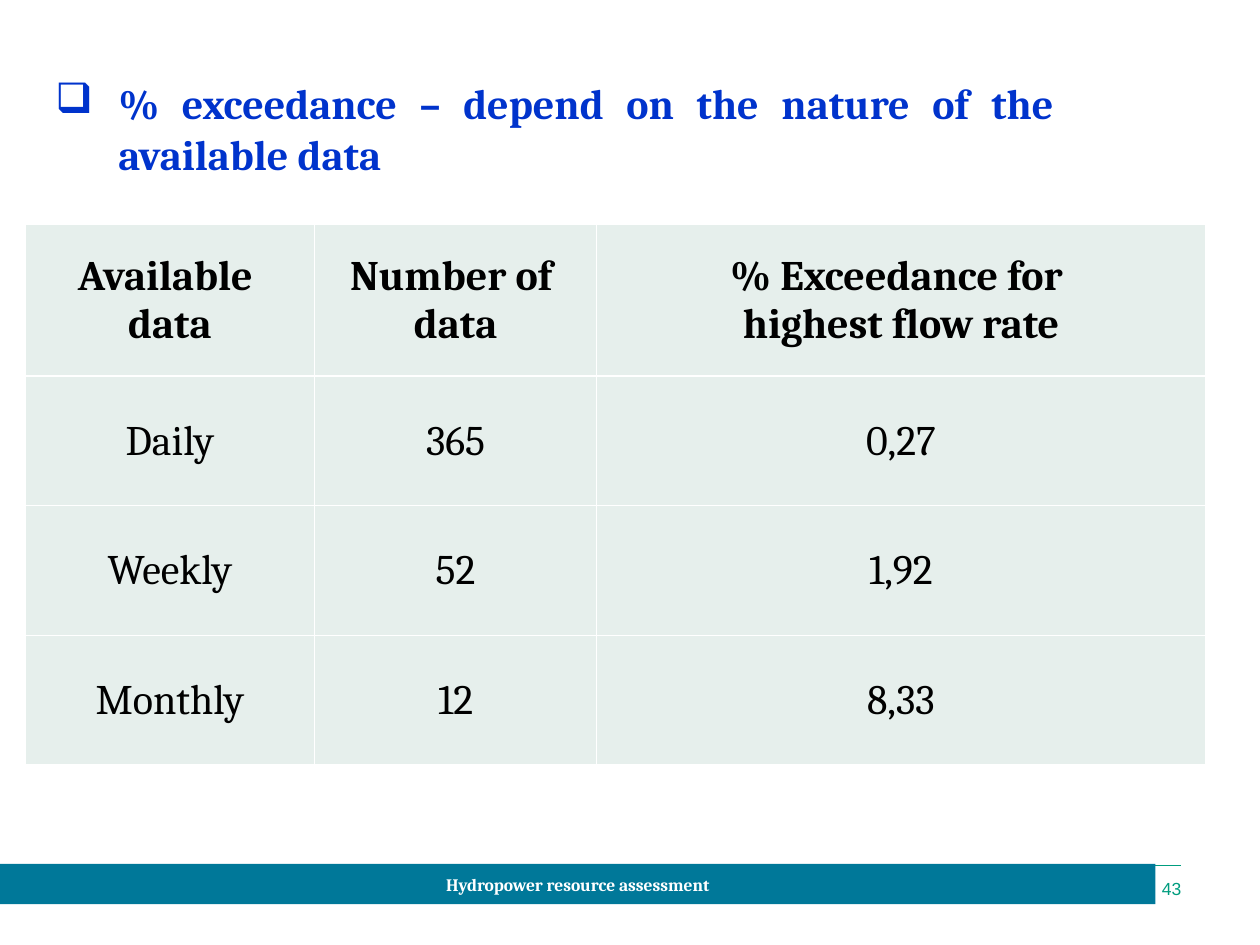
from lxml.etree import SubElement
from pptx import Presentation
from pptx.dml.color import RGBColor
from pptx.enum.shapes import MSO_CONNECTOR, MSO_SHAPE
from pptx.enum.text import MSO_ANCHOR, PP_ALIGN
from pptx.oxml.ns import qn
from pptx.util import Pt

COLORS = {
    "white": "FFFFFF",
    "black": "000000",
    "blue": "0033CC",
    "teal": "007899",
    "green": "009D7F",
    "cell": "E6EFEC",
}
HEADING = {"name": "Cambria", "size": Pt(24), "bold": True}
BODY = {**HEADING, "bold": False}
FOOTER = {"name": "Cambria", "size": Pt(10), "bold": True}
NUMBER = {"name": "Arial", "size": Pt(10), "bold": False}


def rgb(name):
    return RGBColor.from_string(COLORS[name])


def add_solid(parent, color):
    fill = SubElement(parent, qn("a:solidFill"))
    SubElement(fill, qn("a:srgbClr"), val=COLORS[color])


class SlideBuilder:
    def __init__(self, slide):
        self.s = slide

    def fill_text(self, tf, text, font, color, align=PP_ALIGN.CENTER, bullet=None):
        for i, line in enumerate(text.split("\n")):
            p = tf.paragraphs[0] if i == 0 else tf.add_paragraph()
            p.alignment = align
            if bullet:
                self.bullet(p, bullet, color)
            r = p.add_run()
            r.text = line
            for key, value in font.items():
                setattr(r.font, key, value)
            r.font.color.rgb = rgb(color)

    def bullet(self, p, char, color):
        pPr = p._p.get_or_add_pPr()
        pPr.set("marL", str(Pt(36)))
        pPr.set("indent", str(-Pt(36)))
        bu_clr = SubElement(pPr, qn("a:buClr"))
        SubElement(bu_clr, qn("a:srgbClr"), val=COLORS[color])
        SubElement(pPr, qn("a:buChar"), char=char)

    def frame(self, tf, anchor, margins):
        tf.word_wrap = True
        tf.vertical_anchor = anchor
        tf.margin_left = tf.margin_right = Pt(margins[0])
        tf.margin_top = tf.margin_bottom = Pt(margins[1])

    def text(self, box, text, font, color, align, anchor=MSO_ANCHOR.TOP,
             margins=(7.2, 3.6), bullet=None):
        sp = self.s.shapes.add_textbox(*map(Pt, box))
        self.frame(sp.text_frame, anchor, margins)
        self.fill_text(sp.text_frame, text, font, color, align, bullet)

    def bar(self, box, text, font, fill, color):
        sp = self.s.shapes.add_shape(MSO_SHAPE.RECTANGLE, *map(Pt, box))
        sp.shadow.inherit = False
        sp.fill.solid()
        sp.fill.fore_color.rgb = rgb(fill)
        sp.line.fill.background()
        self.frame(sp.text_frame, MSO_ANCHOR.MIDDLE, (7.2, 3.6))
        self.fill_text(sp.text_frame, text, font, color)

    def rule(self, x1, x2, y, color):
        ln = self.s.shapes.add_connector(
            MSO_CONNECTOR.STRAIGHT, Pt(x1), Pt(y), Pt(x2), Pt(y))
        ln.line.color.rgb = rgb(color)
        ln.line.width = Pt(1)
        SubElement(ln._element.spPr, qn("a:effectLst"))

    def cell_borders(self, cell, color):
        tcPr = cell._tc.get_or_add_tcPr()
        for side in ("lnL", "lnR", "lnT", "lnB"):
            add_solid(SubElement(tcPr, qn(f"a:{side}"), w=str(Pt(1))), color)

    def table(self, left, top, widths, heights, rows):
        table = self.s.shapes.add_table(
            len(rows), len(widths), Pt(left), Pt(top),
            Pt(sum(widths)), Pt(sum(heights))).table
        for col, width in zip(table.columns, widths):
            col.width = Pt(width)
        for row, height in zip(table.rows, heights):
            row.height = Pt(height)
        for i, values in enumerate(rows):
            for j, value in enumerate(values):
                cell = table.cell(i, j)
                cell.vertical_anchor = MSO_ANCHOR.MIDDLE
                cell.margin_left = cell.margin_right = cell.margin_top = Pt(0.75)
                cell.margin_bottom = 0
                self.cell_borders(cell, "white")
                cell.fill.solid()
                cell.fill.fore_color.rgb = rgb("cell")
                font = HEADING if i == 0 else BODY
                self.fill_text(cell.text_frame, value, font, "black")


def main():
    prs = Presentation()
    prs.slide_width, prs.slide_height = Pt(720), Pt(540)
    b = SlideBuilder(prs.slides.add_slide(prs.slide_layouts[6]))

    # Footer: rule, page number and title bar
    b.rule(45, 675, 494.6, "green")
    b.text((651, 501.8, 24, 12.2), "43", NUMBER, "green", PP_ALIGN.RIGHT,
           MSO_ANCHOR.MIDDLE, (0, 0))
    b.bar((0, 493.7, 660.3, 23), "Hydropower resource assessment", FOOTER, "teal", "white")

    # Exceedance by data interval
    b.table(14.4, 128.4, (165.4, 161.2, 347.8), (86.4, 74.1, 74.1, 74.1), [
        ("Available \ndata", "Number of \ndata", "% Exceedance for \nhighest flow rate"),
        ("Daily", "365", "0,27"),
        ("Weekly", "52", "1,92"),
        ("Monthly", "12", "8,33"),
    ])

    # Heading
    b.text((24.5, 41, 584.6, 65.4),
           "% exceedance – depend on the nature of the available data",
           HEADING, "blue", PP_ALIGN.JUSTIFY, bullet="❑")

    prs.save("out.pptx")


if __name__ == "__main__":
    main()
